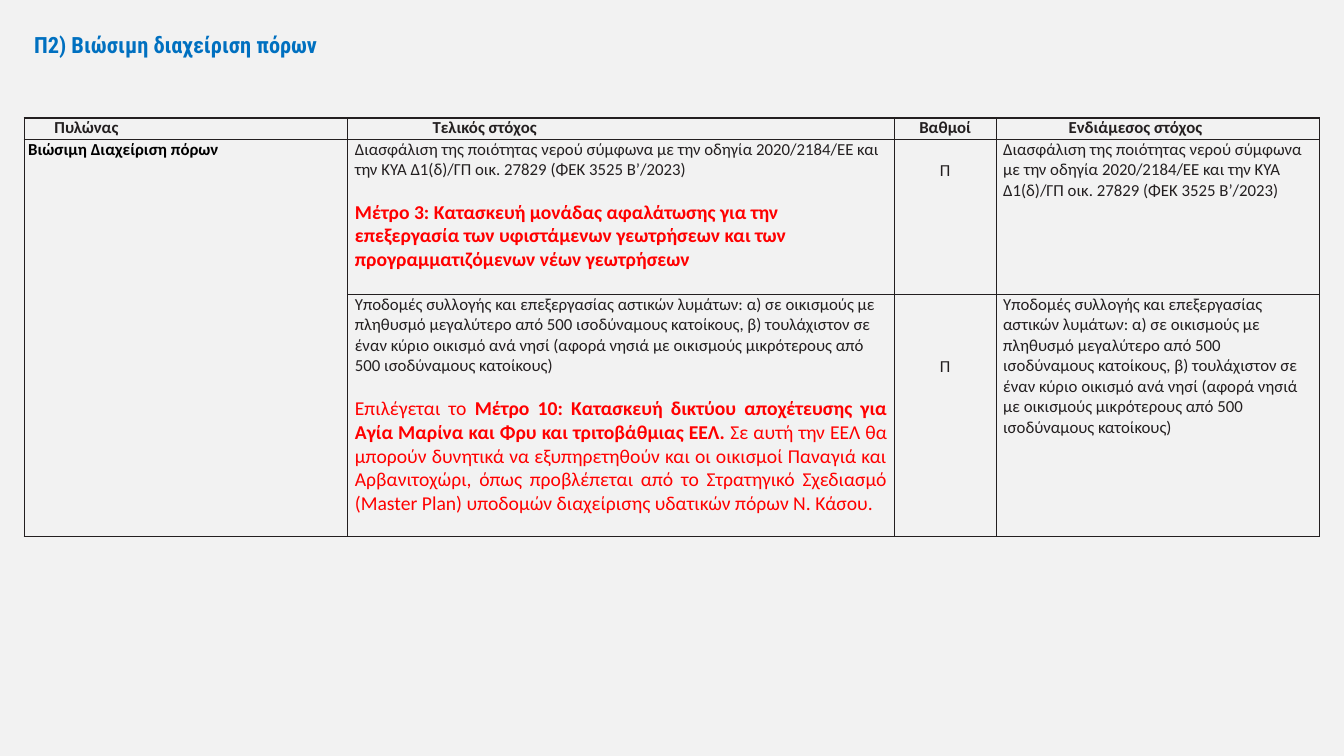
from pptx import Presentation
from pptx.dml.color import RGBColor
from pptx.enum import text
from pptx.oxml import parse_xml
from pptx.oxml.ns import nsdecls
from pptx.util import Inches, Pt

BACKGROUND = RGBColor(0xF2, 0xF2, 0xF2)
BLUE = RGBColor(0x00, 0x70, 0xC0)
INK = RGBColor(0x23, 0x1F, 0x20)
BLACK = RGBColor(0, 0, 0)
RED = RGBColor(0xFF, 0, 0)
LEFT, CENTER, JUSTIFY = (text.PP_ALIGN.LEFT, text.PP_ALIGN.CENTER,
                         text.PP_ALIGN.JUSTIFY)

# Content
TITLE = "Π2) Βιώσιμη διαχείριση πόρων"
WATER = ("Διασφάλιση της ποιότητας νερού σύμφωνα με την οδηγία 2020/2184/ΕΕ "
         "και την ΚΥΑ Δ1(δ)/ΓΠ οικ. 27829 (ΦΕΚ 3525 Β’/2023)")
SEWAGE = ("Υποδομές συλλογής και επεξεργασίας αστικών λυμάτων: α) σε οικισμούς με "
          "πληθυσμό μεγαλύτερο από 500 ισοδύναμους κατοίκους, β) τουλάχιστον σε "
          "έναν κύριο οικισμό ανά νησί (αφορά νησιά με οικισμούς μικρότερους από "
          "500 ισοδύναμους κατοίκους)")
MEASURE_3 = ("Μέτρο 3: Κατασκευή μονάδας αφαλάτωσης για την επεξεργασία των "
             "υφιστάμενων γεωτρήσεων και των προγραμματιζόμενων νέων γεωτρήσεων")
MEASURE_10 = ("Μέτρο 10: Κατασκευή δικτύου αποχέτευσης για Αγία Μαρίνα και Φρυ "
              "και τριτοβάθμιας ΕΕΛ. ")
MEASURE_10_NOTE = ("Σε αυτή την ΕΕΛ θα μπορούν δυνητικά να εξυπηρετηθούν και οι "
                   "οικισμοί Παναγιά και Αρβανιτοχώρι, όπως προβλέπεται από το "
                   "Στρατηγικό Σχεδιασμό (Master Plan) υποδομών διαχείρισης "
                   "υδατικών πόρων Ν. Κάσου.")

# Formats of text
HEADING = {"name": "Calibri", "size": Pt(12), "bold": True, "color": INK}
PILLAR = {**HEADING, "color": BLACK}
BODY = {**HEADING, "bold": False}
MEASURE = {**HEADING, "size": Pt(14), "color": RED}
REMARK = {**MEASURE, "bold": False}
TITLE_FORMAT = {"name": "Roboto Condensed", "size": Pt(16), "bold": True,
                "color": BLUE}

# Each cell: left inset, top inset, paragraphs of (alignment, spans)
COLUMN_WIDTHS = [3.21, 5.42, 1.01, 3.21]
ROW_HEIGHTS = [0.21, 1.54, 2.4]
ROWS = [
    [(0.3, 0, [(LEFT, [("Πυλώνας", HEADING)])]),
     (0.84, 0, [(LEFT, [("Τελικός στόχος", HEADING)])]),
     (0.07, 0, [(CENTER, [("Βαθμοί", HEADING)])]),
     (0.72, 0, [(LEFT, [("Ενδιάμεσος στόχος", HEADING)])])],
    [(0.04, 0, [(LEFT, [("Βιώσιμη Διαχείριση πόρων", PILLAR)])]),
     (0.07, 0, [(LEFT, [(WATER, BODY)]), (LEFT, [(MEASURE_3, MEASURE)])]),
     (0.07, 0.21, [(CENTER, [("Π", BODY)])]),
     (0.07, 0, [(LEFT, [(WATER, BODY)])])],
    [(0, 0, []),
     (0.07, 0, [(LEFT, [(SEWAGE, BODY)]),
                (JUSTIFY, [("Επιλέγεται το ", REMARK), (MEASURE_10, MEASURE),
                           (MEASURE_10_NOTE, REMARK)])]),
     (0.07, 0.62, [(CENTER, [("Π", BODY)])]),
     (0.07, 0, [(LEFT, [(SEWAGE, BODY)])])],
]


def write(frame, paragraphs):
    frame.word_wrap = True
    for index, (alignment, spans) in enumerate(paragraphs):
        para = frame.add_paragraph() if index else frame.paragraphs[0]
        para.alignment = alignment
        if index:
            para.space_before = Pt(14.6)
        for words, style in spans:
            span = para.add_run()
            span.text = words
            for key, value in style.items():
                if key == "color":
                    span.font.color.rgb = value
                else:
                    setattr(span.font, key, value)


def add_borders(cell):
    properties = cell._tc.get_or_add_tcPr()
    for index, side in enumerate(("lnL", "lnR", "lnT", "lnB")):
        properties.insert(index, parse_xml(
            f'<a:{side} {nsdecls("a")} w="12700"><a:solidFill>'
            f'<a:srgbClr val="{INK}"/></a:solidFill></a:{side}>'))


deck = Presentation()
deck.slide_width, deck.slide_height = Inches(13.33), Inches(7.5)
page = deck.slides.add_slide(deck.slide_layouts[6])
page.background.fill.solid()
page.background.fill.fore_color.rgb = BACKGROUND

# Title
title_box = page.shapes.add_textbox(Inches(0.24), Inches(0.26),
                                    Inches(6.67), Inches(0.37))
write(title_box.text_frame, [(LEFT, [(TITLE, TITLE_FORMAT)])])

# Table of goals
goals = page.shapes.add_table(
    len(ROWS), len(COLUMN_WIDTHS), Inches(0.24), Inches(1.17),
    Inches(sum(COLUMN_WIDTHS)), Inches(sum(ROW_HEIGHTS))).table
goals.first_row = goals.horz_banding = False
for column, width in zip(goals.columns, COLUMN_WIDTHS):
    column.width = Inches(width)
for row, height in zip(goals.rows, ROW_HEIGHTS):
    row.height = Inches(height)
goals.cell(1, 0).merge(goals.cell(2, 0))

for row_index, row in enumerate(ROWS):
    for column_index, (left, top, paragraphs) in enumerate(row):
        cell = goals.cell(row_index, column_index)
        cell.margin_left, cell.margin_top = Inches(left), Inches(top)
        cell.margin_right, cell.margin_bottom = Inches(0.07), 0
        cell.fill.background()
        add_borders(cell)
        write(cell.text_frame, paragraphs)

deck.save("out.pptx")
